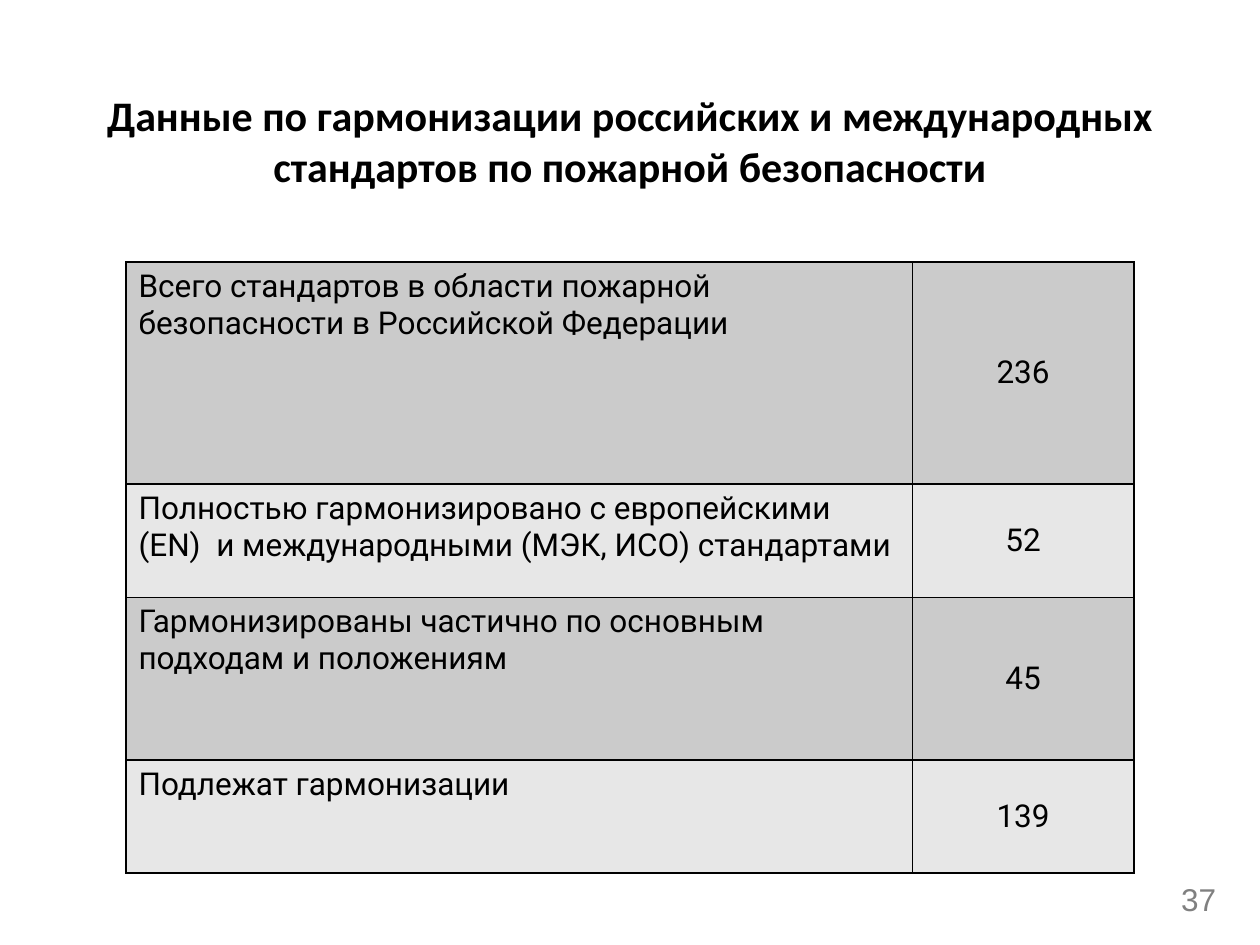
from dataclasses import dataclass

from lxml.etree import SubElement
from pptx import Presentation
from pptx.dml.color import RGBColor
from pptx.enum.text import MSO_ANCHOR, PP_ALIGN
from pptx.oxml.ns import qn
from pptx.slide import Slide
from pptx.util import Pt

BLACK = RGBColor(0x00, 0x00, 0x00)
GRAY = RGBColor(0x80, 0x80, 0x80)
DARK_BAND = RGBColor(0xCB, 0xCB, 0xCB)
LIGHT_BAND = RGBColor(0xE7, 0xE7, 0xE7)

TITLE = "Данные по гармонизации российских и международных стандартов по пожарной безопасности"
STANDARDS = [
    ("Всего стандартов в области пожарной безопасности в Российской Федерации", "236"),
    ("Полностью гармонизировано с европейскими (EN)  и международными (МЭК, ИСО) стандартами", "52"),
    ("Гармонизированы частично по основным подходам и положениям", "45"),
    ("Подлежат гармонизации", "139"),
]
COLUMN_WIDTHS = [449.3, 126.7]
ROW_HEIGHTS = [126.7, 64.8, 92.9, 64.8]


@dataclass
class Painter:
    """Hold the style and the current slide, and draw each kind of element."""

    page: Slide
    table_font: str = "Roboto"
    body_size: float = 18
    border_width: float = 1

    def format_text(self, para, font, size, color, align, bold=False):
        para.alignment = align
        for span in para.runs:
            span.font.name = font
            span.font.size = Pt(size)
            span.font.bold = bold
            span.font.color.rgb = color

    def text(self, words, left, top, width, height, font, size, color, align, bold=False):
        box = self.page.shapes.add_textbox(Pt(left), Pt(top), Pt(width), Pt(height))
        frame = box.text_frame
        frame.word_wrap = True
        frame.vertical_anchor = MSO_ANCHOR.MIDDLE
        frame.text = words
        self.format_text(frame.paragraphs[0], font, size, color, align, bold)

    def borders(self, cell):
        properties = cell._tc.get_or_add_tcPr()
        for index, side in enumerate(("a:lnL", "a:lnR", "a:lnT", "a:lnB")):
            line = SubElement(properties, qn(side), w=str(Pt(self.border_width)))
            fill = SubElement(line, qn("a:solidFill"))
            SubElement(fill, qn("a:srgbClr"), val=str(BLACK))
            properties.insert(index, line)

    def cell(self, cell, words, fill, align, anchor):
        cell.text = words
        cell.vertical_anchor = anchor
        cell.fill.solid()
        cell.fill.fore_color.rgb = fill
        para = cell.text_frame.paragraphs[0]
        para.space_after = Pt(3)
        self.format_text(para, self.table_font, self.body_size, BLACK, align)
        self.borders(cell)

    def table(self, rows, left, top, widths, heights):
        frame = self.page.shapes.add_table(
            len(rows), len(widths), Pt(left), Pt(top), Pt(sum(widths)), Pt(sum(heights)))
        table = frame.table
        for column, width in zip(table.columns, widths):
            column.width = Pt(width)
        for index, (label, count) in enumerate(rows):
            table.rows[index].height = Pt(heights[index])
            band = LIGHT_BAND if index % 2 else DARK_BAND
            self.cell(table.cell(index, 0), label, band, PP_ALIGN.LEFT, MSO_ANCHOR.TOP)
            self.cell(table.cell(index, 1), count, band, PP_ALIGN.CENTER, MSO_ANCHOR.MIDDLE)


def main():
    deck = Presentation()
    deck.slide_width, deck.slide_height = Pt(720), Pt(540)
    painter = Painter(deck.slides.add_slide(deck.slide_layouts[6]))
    painter.text(TITLE, 0, 47.5, 720, 65, "Calibri", 24, BLACK, PP_ALIGN.CENTER, bold=True)
    painter.table(STANDARDS, 72, 149.8, COLUMN_WIDTHS, ROW_HEIGHTS)
    painter.text("37", 594, 498, 108, 31, "Arial", 18, GRAY, PP_ALIGN.RIGHT)
    deck.save("out.pptx")


if __name__ == "__main__":
    main()
